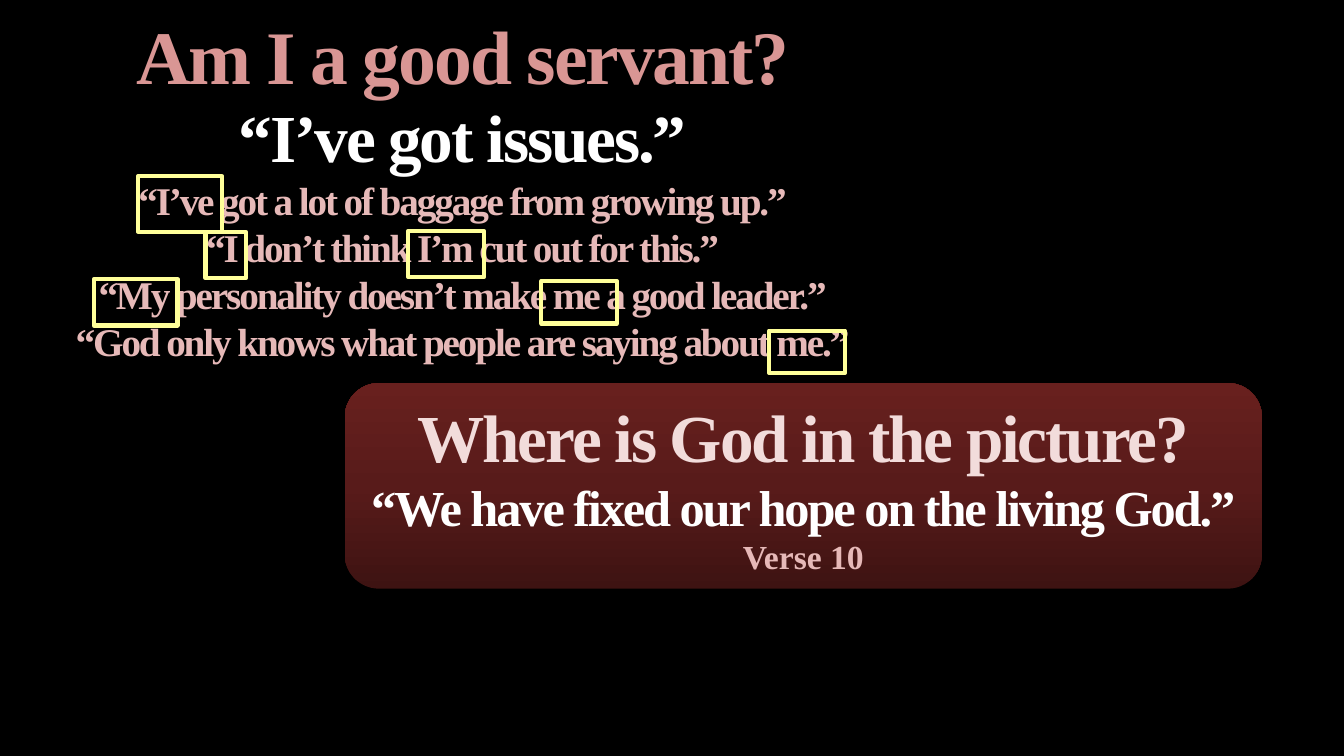
"""Build the "Am I a good servant?" slide."""
from copy import deepcopy

from pptx import Presentation
from pptx.dml.color import RGBColor
from pptx.enum.shapes import MSO_SHAPE
from pptx.enum.text import MSO_ANCHOR, MSO_AUTO_SIZE, PP_ALIGN
from pptx.oxml.ns import qn
from pptx.util import Inches, Pt

WIDTH, HEIGHT = Inches(13.33), Inches(7.5)
COLORS = {
    "background": "000000", "heading": "D99694", "quote": "E6B9B8",
    "white": "FFFFFF", "question": "F2DCDB", "marker": "FFFF99",
    "card_low": "3E1312", "card_middle": "581B1A", "card_high": "68201E",
}
FONT = {"name": "Times New Roman", "bold": True}
TIGHT = -150

TITLE = [("Am I a good servant?", 54, "heading", TIGHT)]
COMPLAINTS = [("“I’ve got issues.”", 48, "white", TIGHT)] + [
    (quote, 28, "quote", TIGHT) for quote in (
        "“I’ve got a lot of baggage from growing up.”",
        "“I don’t think I’m cut out for this.”",
        "“My personality doesn’t make me a good leader.”",
        "“God only knows what people are saying about me.”",
    )
]
ANSWER = [
    ("Where is God in the picture?", 48, "question", TIGHT),
    ("“We have fixed our hope on the living God.”", 36, "white", TIGHT),
    ("Verse 10", 24, "quote", 0),
]
MARKERS = [
    (10.28, 23.33, 6.23, 7.33), (15.3, 30.67, 3, 6.13),
    (30.38, 30.53, 5.63, 6.13), (6.98, 36.93, 6.23, 6.13),
    (57.23, 43.73, 5.63, 5.6), (40.28, 37.2, 5.63, 5.6),
]


def color(name):
    """Return a palette color."""
    return RGBColor.from_string(COLORS[name])


def apply_format(target, values):
    """Set every attribute named in a dict."""
    for name, value in values.items():
        setattr(target, name, value)


def area(left, top, width, height):
    """Turn percentages of the slide into lengths."""
    return {
        "left": int(WIDTH * left / 100), "top": int(HEIGHT * top / 100),
        "width": int(WIDTH * width / 100), "height": int(HEIGHT * height / 100),
    }


def write_lines(box, lines, anchor):
    """Fill a box with centred, unbulleted lines."""
    frame = box.text_frame
    apply_format(frame, {"word_wrap": True, "auto_size": MSO_AUTO_SIZE.NONE,
                         "vertical_anchor": anchor})
    for index, (text, size, shade, spacing) in enumerate(lines):
        para = frame.add_paragraph() if index else frame.paragraphs[0]
        apply_format(para, {"alignment": PP_ALIGN.CENTER, "space_before": Pt(0)})
        properties = para._p.get_or_add_pPr()
        properties.set("marL", "0")
        properties.set("indent", "0")
        properties.append(properties.makeelement(qn("a:buNone"), {}))
        span = para.add_run()
        span.text = text
        apply_format(span.font, {**FONT, "size": Pt(size)})
        span.font.color.rgb = color(shade)
        span._r.get_or_add_rPr().set("spc", str(spacing))


def fill_placeholder(box, place, lines):
    """Move a placeholder and write its lines."""
    apply_format(box, place)
    write_lines(box, lines, MSO_ANCHOR.TOP)


def add_card(page, place, lines):
    """Add a rounded card with a three-step vertical gradient."""
    card = page.shapes.add_shape(MSO_SHAPE.ROUNDED_RECTANGLE, **place)
    card.shadow.inherit = False
    card.line.fill.background()
    card.fill.gradient()
    card.fill.gradient_angle = 90
    stops = card._element.spPr.find(qn("a:gradFill")).find(qn("a:gsLst"))
    stops.insert(1, deepcopy(stops[0]))
    shades = ("card_low", "card_middle", "card_high")
    for stop, position, shade in zip(card.fill.gradient_stops, (0, 0.5, 1), shades):
        stop.position = position
        stop.color.rgb = color(shade)
    write_lines(card, lines, MSO_ANCHOR.MIDDLE)


def add_marker(page, place):
    """Outline a word with an unfilled rectangle."""
    marker = page.shapes.add_shape(MSO_SHAPE.RECTANGLE, **place)
    marker.shadow.inherit = False
    marker.fill.background()
    marker.line.color.rgb = color("marker")
    marker.line.width = Pt(3)


def main():
    """Create and save the deck."""
    deck = Presentation()
    apply_format(deck, {"slide_width": WIDTH, "slide_height": HEIGHT})
    page = deck.slides.add_slide(deck.slide_layouts[1])
    page.background.fill.solid()
    page.background.fill.fore_color.rgb = color("background")
    fill_placeholder(page.shapes.title, area(0.6, 0.53, 67.65, 12), TITLE)
    fill_placeholder(page.placeholders[1], area(0.6, 12, 67.65, 37.87), COMPLAINTS)
    add_card(page, area(25.65, 50.67, 68.25, 27.2), ANSWER)
    for marker in MARKERS:
        add_marker(page, area(*marker))
    deck.save("out.pptx")


if __name__ == "__main__":
    main()
